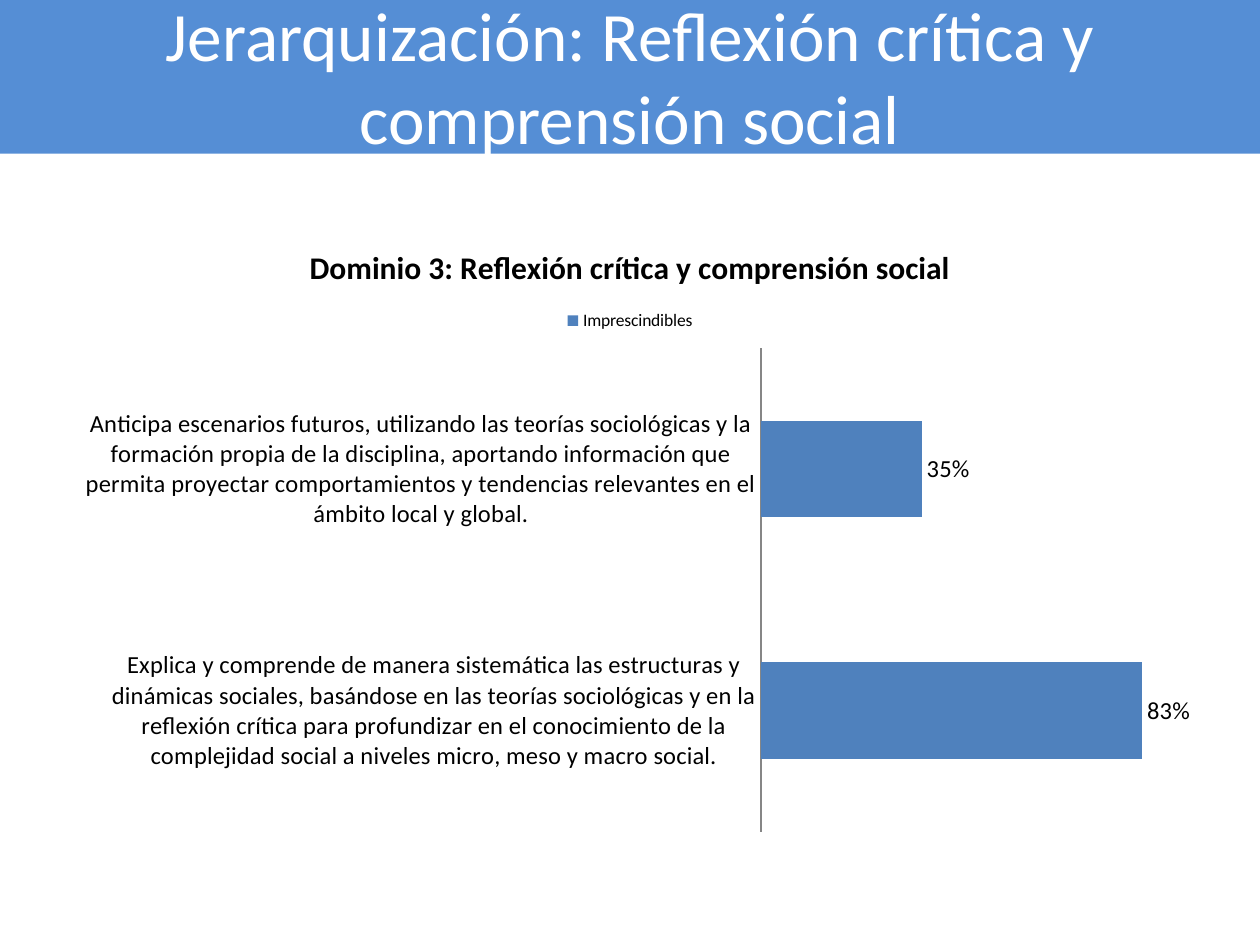
from pptx import Presentation
from pptx import util as u
from pptx.chart.data import CategoryChartData
from pptx.dml.color import RGBColor
from pptx.enum import chart as ch, shapes, text

# Content
TITLE = "Jerarquización: Reflexión crítica y comprensión social"
CHART_TITLE = "Dominio 3: Reflexión crítica y comprensión social"
SERIES = "Imprescindibles"
COMPETENCES = [
    ("Explica y comprende de manera sistemática las estructuras y dinámicas sociales, "
     "basándose en las teorías sociológicas y en la reflexión crítica para profundizar en el "
     "conocimiento de la complejidad social a niveles micro, meso y macro social.", 0.83),
    ("Anticipa escenarios futuros, utilizando las teorías sociológicas y la formación propia "
     "de la disciplina, aportando información que permita proyectar comportamientos y "
     "tendencias relevantes en el ámbito local y global.", 0.35),
]

# Format
BANNER_BLUE = RGBColor(0x55, 0x8E, 0xD5)
BAR_BLUE = RGBColor(0x4F, 0x81, 0xBD)
AXIS_GRAY = RGBColor(0x86, 0x86, 0x86)
WHITE = RGBColor(0xFF, 0xFF, 0xFF)
BLACK = RGBColor(0, 0, 0)
PERCENT = "0%"


def set_font(font, color, **values):
    for name, value in {"name": "Calibri", **values}.items():
        setattr(font, name, value)
    font.color.rgb = color


def add_banner(page):
    box = page.shapes.add_shape(shapes.MSO_SHAPE.RECTANGLE, u.Inches(0), u.Inches(-0.03),
                                u.Inches(10), u.Inches(1.25))
    box.shadow.inherit = False
    box.fill.solid()
    box.fill.fore_color.rgb = BANNER_BLUE
    box.line.fill.background()
    frame = box.text_frame
    frame.word_wrap = True
    frame.vertical_anchor = text.MSO_ANCHOR.MIDDLE
    para = frame.paragraphs[0]
    para.alignment = text.PP_ALIGN.CENTER
    span = para.add_run()
    span.text = TITLE
    set_font(span.font, WHITE, size=u.Pt(39.6))


def add_bar_chart(page):
    data = CategoryChartData(number_format=PERCENT)
    data.categories = [name for name, _ in COMPETENCES]
    data.add_series(SERIES, [share for _, share in COMPETENCES])
    chart = page.shapes.add_chart(ch.XL_CHART_TYPE.BAR_CLUSTERED, u.Inches(0.5), u.Inches(1.75),
                                  u.Inches(9), u.Inches(4.95), data).chart
    set_font(chart.font, BLACK, size=u.Pt(10))

    # Title and legend
    chart.has_title = True
    para = chart.chart_title.text_frame.paragraphs[0]
    span = para.add_run()
    span.text = CHART_TITLE
    set_font(span.font, BLACK, size=u.Pt(18), bold=True)
    chart.has_legend = True
    chart.legend.position = ch.XL_LEGEND_POSITION.TOP
    chart.legend.include_in_layout = False

    # Axes
    names, values = chart.category_axis, chart.value_axis
    names.major_tick_mark = ch.XL_TICK_MARK.NONE
    names.format.line.color.rgb = AXIS_GRAY
    set_font(names.tick_labels.font, BLACK, size=u.Pt(14))
    values.has_major_gridlines = False
    values.visible = False
    values.minimum_scale, values.maximum_scale = 0, 0.9

    # Bars and their labels
    plot = chart.plots[0]
    plot.gap_width, plot.overlap, plot.vary_by_categories = 150, -25, False
    bars = plot.series[0]
    bars.format.fill.solid()
    bars.format.fill.fore_color.rgb = BAR_BLUE
    labels = bars.data_labels
    label_values = {"show_value": True, "number_format": PERCENT,
                    "number_format_is_linked": False,
                    "position": ch.XL_LABEL_POSITION.OUTSIDE_END}
    for name, value in label_values.items():
        setattr(labels, name, value)
    set_font(labels.font, BLACK, size=u.Pt(14))


def main():
    deck = Presentation()
    deck.slide_width, deck.slide_height = u.Inches(10), u.Inches(7.5)
    page = deck.slides.add_slide(deck.slide_layouts[6])
    add_banner(page)
    add_bar_chart(page)
    deck.save("out.pptx")


if __name__ == "__main__":
    main()
